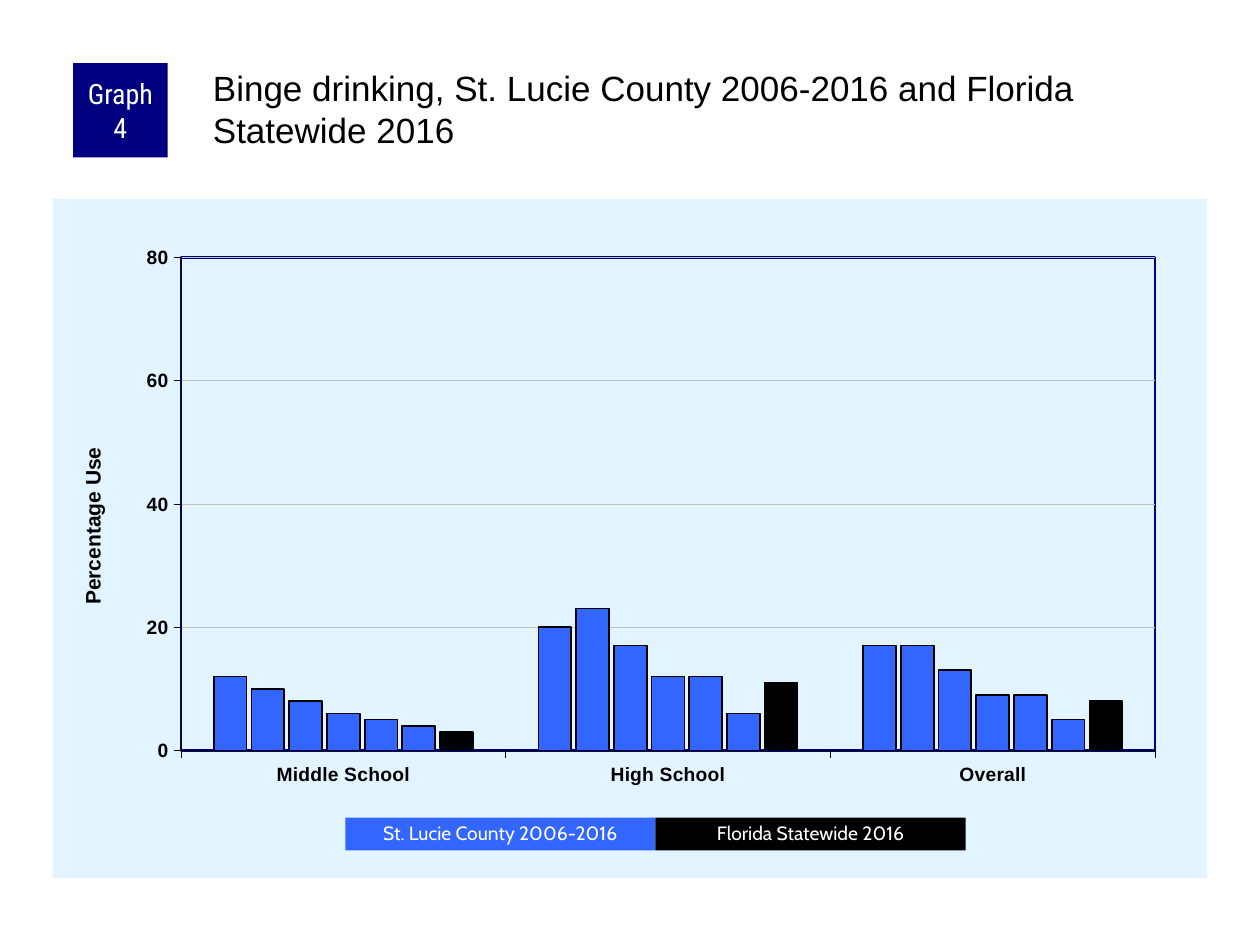
from lxml import etree
from pptx import Presentation
from pptx.chart.data import CategoryChartData
from pptx.dml.color import RGBColor
from pptx.enum.chart import XL_CHART_TYPE, XL_TICK_MARK
from pptx.enum.shapes import MSO_SHAPE
from pptx.enum.text import MSO_ANCHOR, PP_ALIGN
from pptx.oxml import parse_xml
from pptx.util import Pt

COLUMNS = XL_CHART_TYPE.COLUMN_CLUSTERED
TICK_OUT, TICK_NONE = XL_TICK_MARK.OUTSIDE, XL_TICK_MARK.NONE
RECTANGLE = MSO_SHAPE.RECTANGLE
MIDDLE, TOP = MSO_ANCHOR.MIDDLE, MSO_ANCHOR.TOP
CENTER = PP_ALIGN.CENTER

COLORS = {
    "navy": "000080", "county": "3366FF", "state": "000000", "panel": "E1F4FF",
    "grid": "C0C0C0", "text": "000000", "white": "FFFFFF",
}
NAMESPACES = (
    'xmlns:c="http://schemas.openxmlformats.org/drawingml/2006/chart" '
    'xmlns:a="http://schemas.openxmlformats.org/drawingml/2006/main"'
)

CATEGORIES = ["Middle School", "High School", "Overall"]
SERIES = [
    (12, 20, 17), (10, 23, 17), (8, 17, 13), (6, 12, 9),
    (5, 12, 9), (4, 6, 5), (3, 11, 8),
]


def rgb(name):
    return RGBColor.from_string(COLORS[name])


def set_font(font, size, color, name="Arial", bold=False):
    font.size, font.name, font.bold = Pt(size), name, bold
    font.color.rgb = rgb(color)


def set_line(line, color, width):
    line.color.rgb = rgb(color)
    line.width = Pt(width)


def add_block(page, box, text, fill, size, font_name, spacing=None, margins=None):
    """Filled rectangle with centred white text."""
    block = page.shapes.add_shape(RECTANGLE, *map(Pt, box))
    block.shadow.inherit = False
    block.fill.solid()
    block.fill.fore_color.rgb = rgb(fill)
    block.line.fill.background()
    frame = block.text_frame
    frame.word_wrap = True
    frame.vertical_anchor = MIDDLE
    if margins:
        frame.margin_left = frame.margin_right = Pt(margins[0])
        frame.margin_top = frame.margin_bottom = Pt(margins[1])
    para = frame.paragraphs[0]
    para.text = text
    para.alignment = CENTER
    para.line_spacing = spacing
    set_font(para.font, size, "white", font_name)


def add_heading(page, box):
    left, top, width, height = box
    # Graph number
    add_block(page, (left, top, 54, 54), "Graph 4", "navy", 16,
              "Roboto Condensed", margins=(3.6, 0))
    # Title
    indent = 77.76
    title = page.shapes.add_textbox(Pt(left + indent), Pt(top), Pt(width - indent), Pt(height))
    frame = title.text_frame
    frame.word_wrap = True
    frame.vertical_anchor = TOP
    frame.margin_left = frame.margin_top = Pt(2.16)
    frame.margin_right = frame.margin_bottom = 0
    para = frame.paragraphs[0]
    para.text = "Binge drinking, St. Lucie County 2006-2016 and Florida Statewide 2016"
    set_font(para.font, 20, "text")


def manual_layout(x, y, size=None):
    parts = [("xMode", "edge"), ("yMode", "edge"), ("x", x), ("y", y)]
    if size:
        parts = [("layoutTarget", "inner"), *parts, ("w", size[0]), ("h", size[1])]
    body = "".join(f'<c:{tag} val="{value}"/>' for tag, value in parts)
    return parse_xml(f"<c:layout {NAMESPACES}><c:manualLayout>{body}</c:manualLayout></c:layout>")


def area_style(fill, line):
    return parse_xml(f"<c:spPr {NAMESPACES}>{fill}<a:ln w=\"19050\">{line}</a:ln></c:spPr>")


def solid(name):
    return f'<a:solidFill><a:srgbClr val="{COLORS[name]}"/></a:solidFill>'


def style_areas(chart):
    """Panel fill, plot position and plot border."""
    root = chart.element.find("{*}chart")
    root.addnext(area_style(solid("panel"), "<a:noFill/>"))
    plot_area = root.find("{*}plotArea")
    for layout in plot_area.findall("{*}layout"):
        plot_area.remove(layout)
    plot_area.insert(0, manual_layout(0.111, 0.086, (0.844, 0.726)))
    plot_area.append(area_style("<a:noFill/>", solid("navy")))


def style_axes(chart):
    category_axis, value_axis = chart.category_axis, chart.value_axis
    for axis in (category_axis, value_axis):
        axis.major_tick_mark, axis.minor_tick_mark = TICK_OUT, TICK_NONE
        set_font(axis.tick_labels.font, 11, "text", bold=True)
        set_line(axis.format.line, "text", 0.25)
    value_axis.minimum_scale, value_axis.maximum_scale = 0, 80
    value_axis.major_unit = 20
    set_line(value_axis.major_gridlines.format.line, "grid", 0.25)

    title = value_axis.axis_title
    para = title.text_frame.paragraphs[0]
    para.text = "Percentage Use"
    set_font(para.font, 12, "text", bold=True)
    title_xml = value_axis._element.find("{*}title")
    for layout in title_xml.findall("{*}layout"):
        title_xml.remove(layout)
    title_xml.find("{*}tx").addnext(manual_layout(0.02, 0.36))
    body = title_xml.find(".//{*}bodyPr")
    body.set("rot", "-5400000")
    body.set("vert", "horz")


def add_usage_chart(page, box):
    data = CategoryChartData()
    data.categories = CATEGORIES
    for number, values in enumerate(SERIES, 1):
        data.add_series(f"Series {number}", values)
    chart = page.shapes.add_chart(COLUMNS, *map(Pt, box), data).chart
    chart.has_legend = chart.has_title = False
    set_font(chart.font, 8, "text")

    plot = chart.plots[0]
    plot.gap_width, plot.overlap = 200, -15
    plot.vary_by_categories = False
    for number, series in enumerate(plot.series, 1):
        series.format.fill.solid()
        series.format.fill.fore_color.rgb = rgb("state" if number == len(SERIES) else "county")
        set_line(series.format.line, "text", 1)
    style_axes(chart)
    style_areas(chart)


def add_legend(page, box):
    left, top, width, height = box
    entries = [("St. Lucie County 2006-2016", "county"), ("Florida Statewide 2016", "state")]
    step = width / len(entries)
    for index, (label, fill) in enumerate(entries):
        add_block(page, (left + index * step, top, step, height), label, fill, 11,
                  "Cabin", spacing=0.9)


def main():
    deck = Presentation()
    deck.slide_width, deck.slide_height = Pt(720), Pt(540)
    page = deck.slides.add_slide(deck.slide_layouts[6])
    add_usage_chart(page, (30.24, 113.76, 659.52, 388.08))
    add_heading(page, (41.76, 36, 648, 59.76))
    add_legend(page, (197.28, 467.28, 354.6, 18.72))
    deck.save("out.pptx")


if __name__ == "__main__":
    main()
